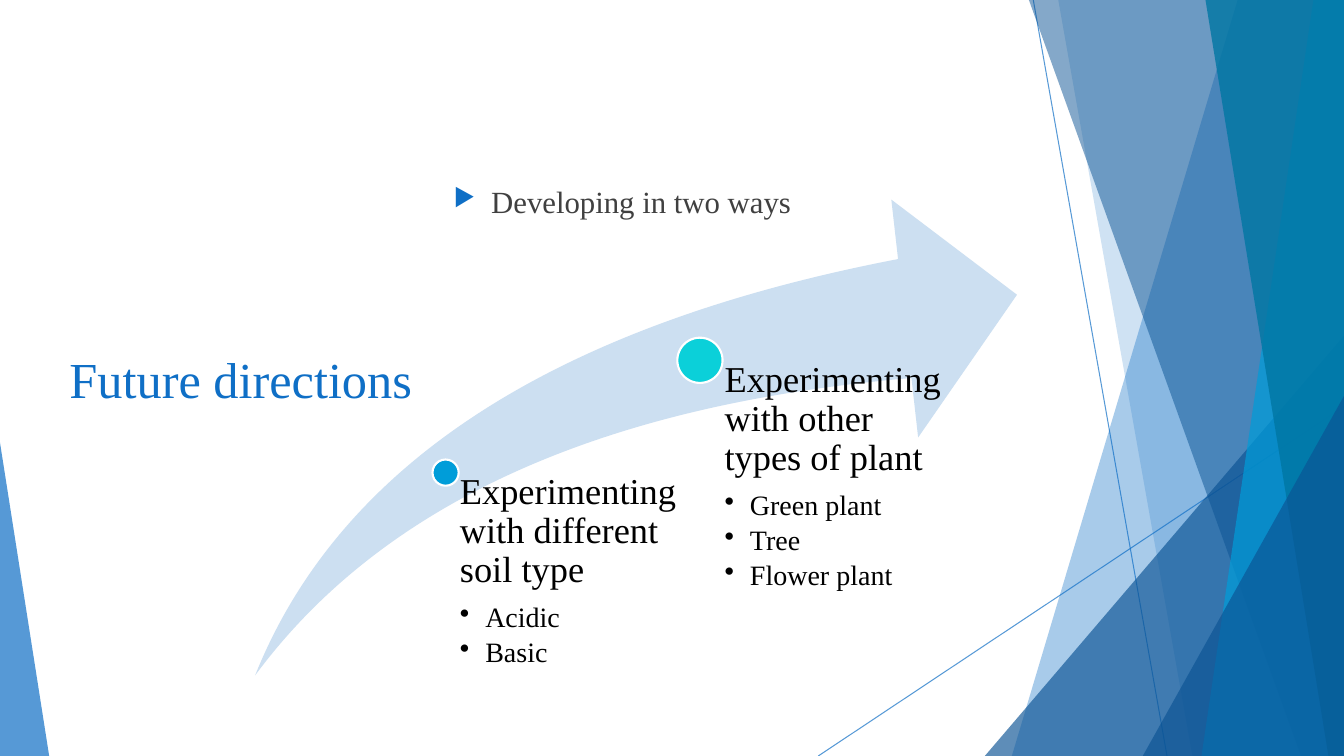
from lxml import etree
from pptx import Presentation
from pptx import util as u
from pptx.dml.color import RGBColor
from pptx.enum import shapes, text
from pptx.oxml import ns

W, H = 33.87, 19.05
COLORS = {
    "blue": "0F6FC6", "navy": "0B5394", "sky": "009DD9", "teal": "0076A3",
    "cyan": "0BD0D9", "pale": "CCDFF1", "white": "FFFFFF", "grey": "404040",
    "black": "000000",
}
FACETS = [
    (31.19, 25.5, "blue", 36),
    (26.67, 30.05, "blue", 20),
    (25.93, 32.79, "navy", 50),
    (33.1, 30.28, "sky", 70),
    (30.38, 33.48, "teal", 80),
]
STEPS = [
    ((10.9, 11.58, 0.66), "sky", (11.23, 11.91, 6.25, 5.13), 0.36,
     "Experimenting with different soil type", ["Acidic", "Basic"]),
    ((17.07, 8.51, 1.14), "cyan", (17.65, 9.09, 6.25, 7.95), 0.61,
     "Experimenting with other types of plant", ["Green plant", "Tree", "Flower plant"]),
]


def rgb(name):
    return RGBColor.from_string(COLORS[name])


def apply(target, values):
    for name, value in values.items():
        setattr(target, name, value)


def add_xml(parent, tag, **attrs):
    return etree.SubElement(parent, ns.qn(tag), attrs)


def set_alpha(element, percent):
    color = next(element.iter(ns.qn("a:srgbClr")))
    add_xml(color, "a:alpha", val=str(percent * 1000))


def paint(shape, color, alpha=100, outline=None):
    shape.shadow.inherit = False
    shape.fill.solid()
    shape.fill.fore_color.rgb = rgb(color)
    if alpha < 100:
        set_alpha(shape._element.spPr, alpha)
    if outline:
        shape.line.color.rgb = rgb(outline)
        shape.line.width = u.Pt(1.5)
    else:
        shape.line.fill.background()


def add_preset(s, kind, box, color, adjustments=(), **style):
    shape = s.shapes.add_shape(kind, *map(u.Cm, box))
    for i, value in enumerate(adjustments):
        shape.adjustments[i] = value
    paint(shape, color, **style)


def add_facet(s, top_x, bottom_x, color, alpha):
    corners = [(top_x, 0), (W, 0), (W, H), (bottom_x, H)]
    points = [(u.Cm(x), u.Cm(y)) for x, y in corners]
    builder = s.shapes.build_freeform(*points[0])
    builder.add_line_segments(points[1:], close=True)
    paint(builder.convert_to_shape(), color, alpha)


def add_line(s, *ends):
    line = s.shapes.add_connector(shapes.MSO_CONNECTOR.STRAIGHT, *map(u.Cm, ends))
    line.line.color.rgb = rgb("blue")
    line.line.width = u.Pt(0.75)
    spPr = line._element.spPr
    set_alpha(spPr, 70)
    add_xml(spPr, "a:effectLst")


def add_text_frame(s, box, **values):
    tf = s.shapes.add_textbox(*map(u.Cm, box)).text_frame
    apply(tf, {"word_wrap": True, **values})
    return tf


def write(p, content, size, color="black", **spacing):
    apply(p, spacing)
    r = p.add_run()
    r.text = content
    apply(r.font, {"name": "Times New Roman", "size": u.Pt(size)})
    r.font.color.rgb = rgb(color)


def add_bullet(p, char, indent, color=None, percent=100):
    pPr = p._p.get_or_add_pPr()
    pPr.set("marL", str(u.Cm(indent)))
    pPr.set("indent", str(-u.Cm(indent)))
    if color:
        add_xml(add_xml(pPr, "a:buClr"), "a:srgbClr", val=COLORS[color])
    add_xml(pPr, "a:buSzPct", val=str(percent * 1000))
    add_xml(pPr, "a:buChar", char=char)


def add_step(s, dot, color, box, inset, heading, items):
    left, top, size = dot
    add_preset(s, shapes.MSO_SHAPE.OVAL, (left, top, size, size), color, outline="white")
    tf = add_text_frame(s, box, margin_left=u.Cm(inset), margin_top=0,
                        margin_right=0, margin_bottom=0)
    write(tf.paragraphs[0], heading, 26, line_spacing=0.9, space_after=u.Pt(9))
    for item in items:
        p = tf.add_paragraph()
        write(p, item, 20, level=1, line_spacing=0.9, space_after=u.Pt(3.5))
        add_bullet(p, "•", 0.64)


def add_backdrop(s):
    triangle = shapes.MSO_SHAPE.ISOSCELES_TRIANGLE
    add_line(s, 26.04, 0, 29.41, H)
    add_line(s, W, 10.24, 20.62, H)
    for facet in FACETS[:2]:
        add_facet(s, *facet)
    add_preset(s, triangle, (24.82, 8.46, 9.05, 10.59), "navy", [1], alpha=66)
    for facet in FACETS[2:]:
        add_facet(s, *facet)
    add_preset(s, triangle, (28.8, 9.98, 5.07, 9.07), "navy", [1], alpha=66)
    add_preset(s, triangle, (0, 11.15, 1.24, 7.9), "blue", [0], alpha=70)


def main():
    prs = Presentation()
    apply(prs, {"slide_width": u.Cm(W), "slide_height": u.Cm(H)})
    s = prs.slides.add_slide(prs.slide_layouts[6])
    add_backdrop(s)

    middle = {"vertical_anchor": text.MSO_ANCHOR.MIDDLE}
    title = add_text_frame(s, (1.5, 6.86, 9.68, 5.36), **middle)
    write(title.paragraphs[0], "Future directions", 36, "blue")
    intro = add_text_frame(s, (11.18, 4.11, 9.68, 1.9), **middle).paragraphs[0]
    write(intro, "Developing in two ways", 22, "grey")
    add_bullet(intro, "▶", 0.95, "blue", 80)

    add_preset(s, shapes.MSO_SHAPE.SWOOSH_ARROW, (6.43, 5.03, 19.2, 11.99),
               "pale", [0.25, 0.25])
    for step in STEPS:
        add_step(s, *step)
    prs.save("out.pptx")


if __name__ == "__main__":
    main()
